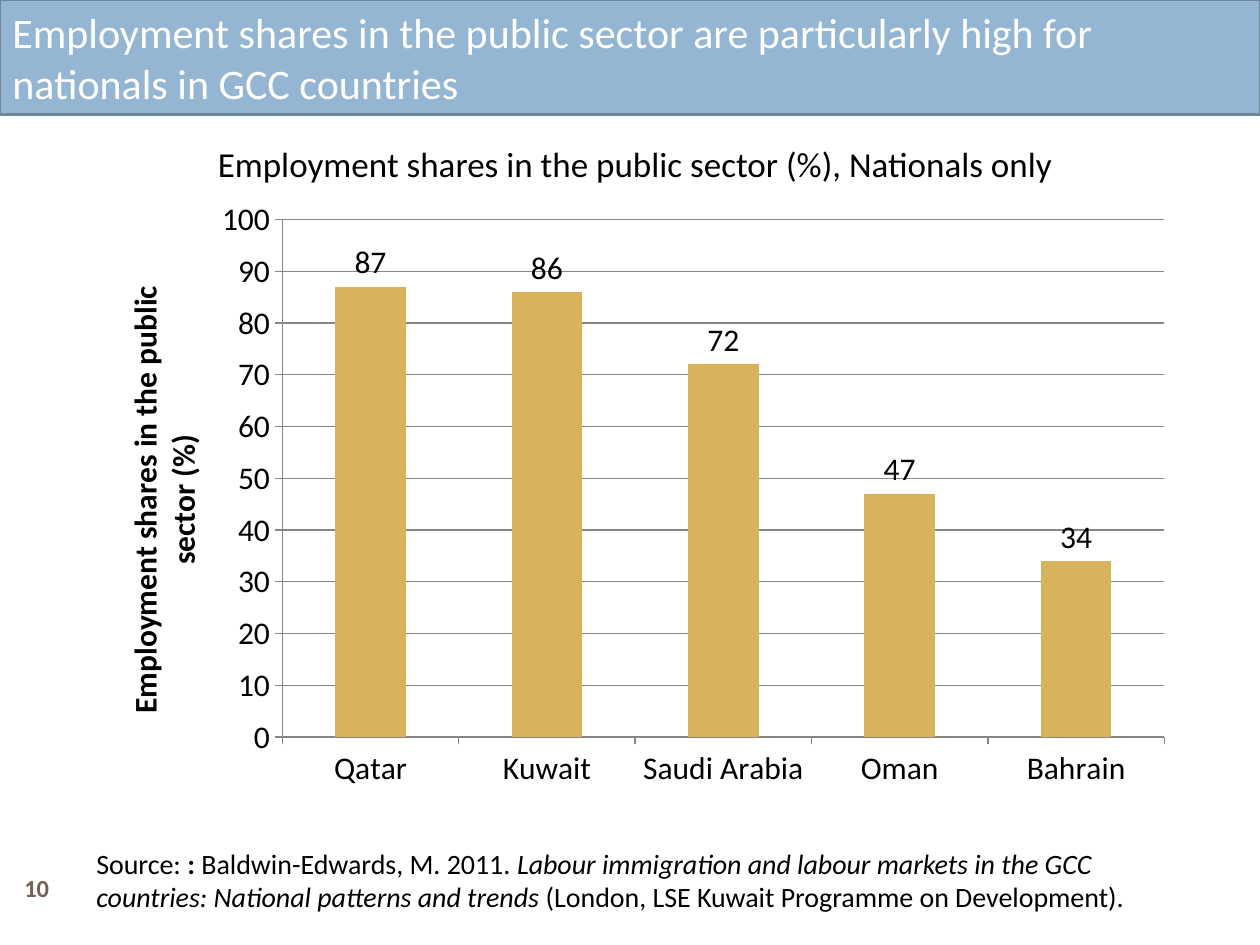
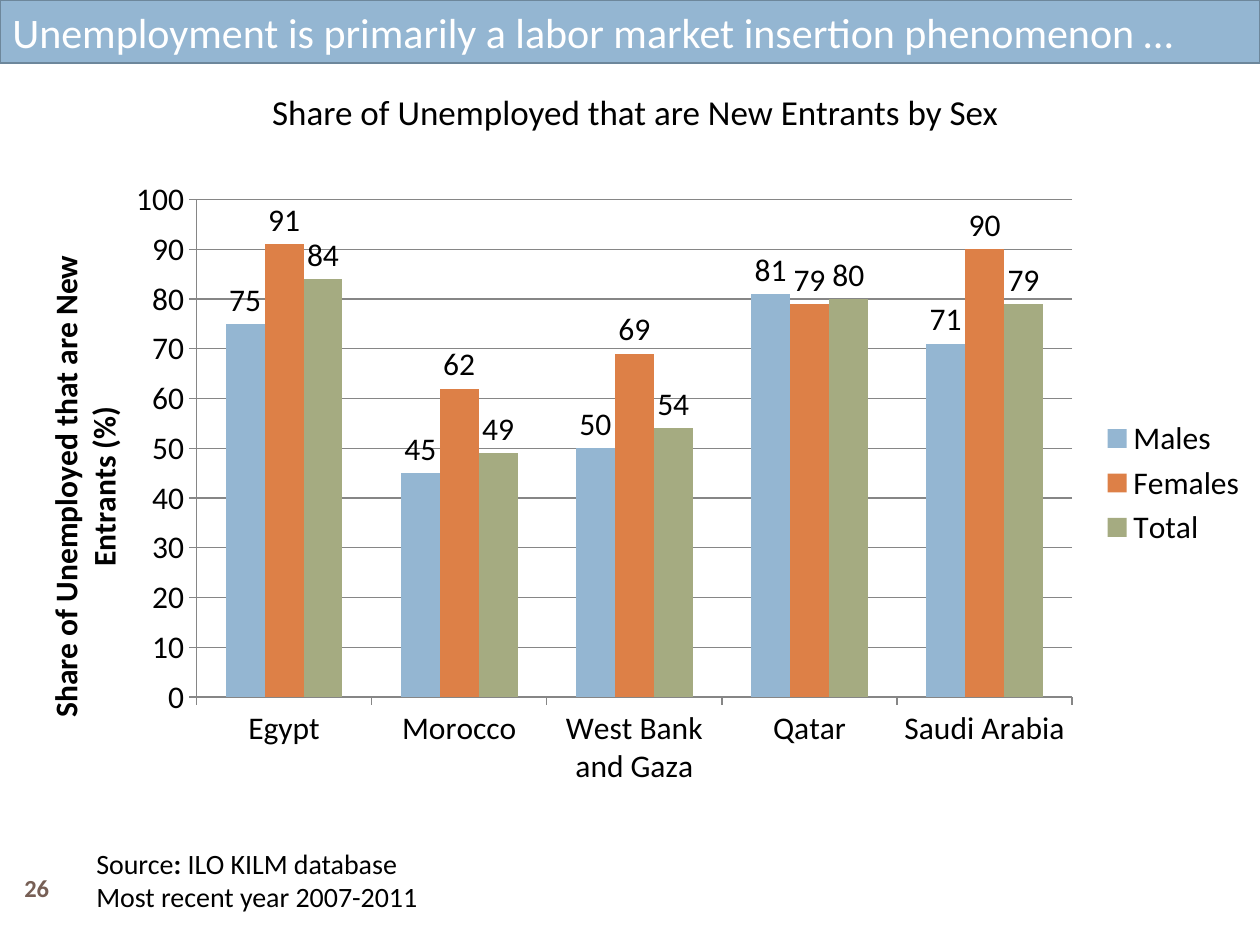
from lxml import etree
from pptx import Presentation
from pptx import util as u
from pptx.chart.data import CategoryChartData
from pptx.dml.color import RGBColor
from pptx.enum import chart as kinds, shapes, text
from pptx.oxml.ns import qn

PX = 7620  # 120 px to the inch
FONT = "Calibri"
BLACK, WHITE, BLUE, BAND_EDGE = "000000", "FFFFFF", "94B6D2", "6D879B"
GOLD, ORANGE, GREEN, BROWN, GRID = "D8B25C", "DD8047", "A5AB81", "775F55", "868686"


def colour(hex_code):
    return RGBColor.from_string(hex_code)


def add_text(page, place, paragraphs, size, ink=BLACK, align="LEFT",
             anchor="TOP", fill=None, edge=None):
    """Add text; each paragraph is a list of (words, style), style holding b or i."""
    place = [n * PX for n in place]
    if fill:
        box = page.shapes.add_shape(shapes.MSO_SHAPE.RECTANGLE, *place)
        box.shadow.inherit = False
        box.fill.solid()
        box.fill.fore_color.rgb = colour(fill)
        box.line.color.rgb = colour(edge)
        box.line.width = u.Pt(1.5)
    else:
        box = page.shapes.add_textbox(*place)
    frame = box.text_frame
    frame.word_wrap = True
    frame.vertical_anchor = text.MSO_ANCHOR[anchor]
    for i, spans in enumerate(paragraphs):
        para = frame.paragraphs[0] if i == 0 else frame.add_paragraph()
        para.alignment = text.PP_ALIGN[align]
        for words, style in spans:
            span = para.add_run()
            span.text = words
            span.font.name, span.font.size = FONT, u.Pt(size)
            span.font.color.rgb = colour(ink)
            span.font.bold, span.font.italic = "b" in style, "i" in style


# Content; plot_area and axis_title_at are fractions of the chart
slides = [
    dict(
        number="10",
        title="Employment shares in the public sector are particularly high for "
              "nationals in GCC countries",
        band_height=109,
        heading="Employment shares in the public sector (%), Nationals only",
        heading_top=130,
        source=[[("Source: ", ""), (": ", "b"), ("Baldwin-Edwards, M. 2011. ", ""),
                 ("Labour immigration and labour markets in the GCC countries: "
                  "National patterns and trends ", "i"),
                 ("(London, LSE Kuwait Programme on Development).", "")]],
        chart_place=(80, 180, 1050, 580),
        plot_area=dict(x=0.18, y=0.05, w=0.8, h=0.85),
        axis_title_at=dict(x=0.03, y=0.15),
        axis_title="Employment shares in the public sector (%)",
        countries=["Qatar", "Kuwait", "Saudi Arabia", "Oman", "Bahrain"],
        series=[("Series 1", GOLD, (87, 86, 72, 47, 34))],
    ),
    dict(
        number="26",
        title="Unemployment is primarily a labor market insertion phenomenon …",
        band_height=60,
        heading="Share of Unemployed that are New Entrants by Sex",
        heading_top=80,
        source=[[("Source", ""), (": ", "b"), ("ILO KILM database", "")],
                [("Most recent year 2007-2011", "")]],
        chart_place=(0, 160, 1200, 600),
        plot_area=dict(x=0.156, y=0.05, w=0.695, h=0.79),
        axis_title_at=dict(x=0.03, y=0.13),
        axis_title="Share of Unemployed that are New Entrants (%)",
        countries=["Egypt", "Morocco", "West Bank and Gaza", "Qatar", "Saudi Arabia"],
        series=[("Males", BLUE, (75, 45, 50, 81, 71)),
                ("Females", ORANGE, (91, 62, 69, 79, 90)),
                ("Total", GREEN, (84, 49, 54, 80, 79))],
    ),
]

deck = Presentation()
deck.slide_width, deck.slide_height = 1200 * PX, 900 * PX

for item in slides:
    page = deck.slides.add_slide(deck.slide_layouts[6])

    # Source, page number, title band and chart heading
    add_text(page, (80, 800, 1080, 70), item["source"], 16)
    add_text(page, (0, 820, 70, 50), [[(item["number"], "b")]], 14, BROWN,
             align="CENTER", anchor="MIDDLE")
    add_text(page, (0, 0, 1200, item["band_height"]), [[(item["title"], "")]], 24,
             WHITE, anchor="MIDDLE", fill=BLUE, edge=BAND_EDGE)
    add_text(page, (90, item["heading_top"], 1030, 53), [[(item["heading"], "")]], 20,
             align="CENTER")

    # Column chart
    data = CategoryChartData()
    data.categories = item["countries"]
    for name, _, values in item["series"]:
        data.add_series(name, values)
    chart = page.shapes.add_chart(kinds.XL_CHART_TYPE.COLUMN_CLUSTERED,
                                  *[n * PX for n in item["chart_place"]], data).chart
    chart.has_title = False
    chart.font.name, chart.font.size = FONT, u.Pt(18)
    chart.font.color.rgb = colour(BLACK)
    chart.has_legend = len(item["series"]) > 1
    if chart.has_legend:
        chart.legend.position = kinds.XL_LEGEND_POSITION.RIGHT
        chart.legend.include_in_layout = False

    plot = chart.plots[0]
    plot.gap_width, plot.overlap = 150, 0
    plot.vary_by_categories = False
    plot.has_data_labels = True
    labels = plot.data_labels
    labels.show_value = True
    labels.number_format, labels.number_format_is_linked = "#,##0", False
    labels.position = kinds.XL_LABEL_POSITION.OUTSIDE_END
    for series, (_, shade, _) in zip(plot.series, item["series"]):
        series.format.fill.solid()
        series.format.fill.fore_color.rgb = colour(shade)

    # Axes and gridlines
    scale = chart.value_axis
    scale.minimum_scale, scale.maximum_scale, scale.major_unit = 0, 100, 10
    scale.has_major_gridlines = True
    for axis in (scale, chart.category_axis):
        axis.major_tick_mark = kinds.XL_TICK_MARK.OUTSIDE
    for ruled in (scale, chart.category_axis, scale.major_gridlines):
        ruled.format.line.color.rgb = colour(GRID)
        ruled.format.line.width = u.Pt(0.75)
    scale.has_title = True
    frame = scale.axis_title.text_frame
    frame.text = item["axis_title"]
    font = frame.paragraphs[0].runs[0].font
    font.name, font.size, font.bold = FONT, u.Pt(18), True
    font.color.rgb = colour(BLACK)

    # Fixed places for the plot area and the axis title
    plot_area = chart.element.xpath("c:chart/c:plotArea")[0]
    for parent, index, place in ((plot_area, 0, item["plot_area"]),
                                 (scale.axis_title.element, 1, item["axis_title_at"])):
        for old in parent.findall(qn("c:layout")):
            parent.remove(old)
        layout = etree.Element(qn("c:layout"))
        parent.insert(index, layout)
        manual = etree.SubElement(layout, qn("c:manualLayout"))
        if "w" in place:
            etree.SubElement(manual, qn("c:layoutTarget"), val="inner")
        for side in "xy":
            etree.SubElement(manual, qn(f"c:{side}Mode"), val="edge")
        for side, share in place.items():
            etree.SubElement(manual, qn(f"c:{side}"), val=str(share))

deck.save("out.pptx")
